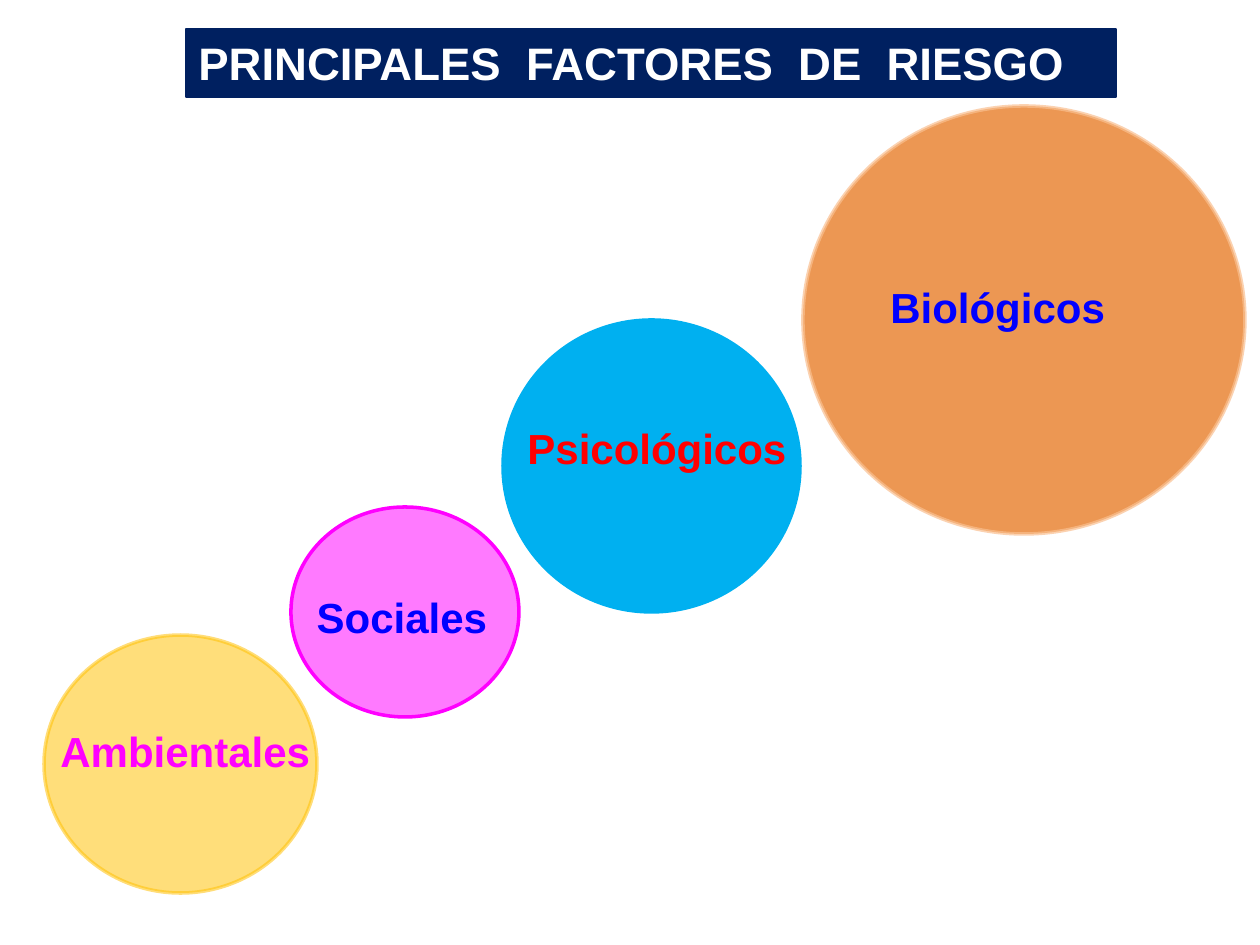
from dataclasses import dataclass

from lxml.etree import SubElement
from pptx import Presentation
from pptx.dml.color import RGBColor
from pptx.enum.shapes import MSO_SHAPE
from pptx.enum.text import MSO_ANCHOR, MSO_AUTO_SIZE, PP_ALIGN
from pptx.oxml.ns import qn
from pptx.shapes.autoshape import Shape
from pptx.slide import Slide
from pptx.util import Pt

PIXEL = 914400 / 126
LABEL_HEIGHT = 63
FONT = "Arial"
COLORS = {
    "orange": "E46C0A",
    "peach": "FAC090",
    "amber": "FFC000",
    "sky": "00B0F0",
    "magenta": "FF00FF",
    "blue": "0000FF",
    "red": "FF0000",
    "navy": "002060",
    "white": "FFFFFF",
}


@dataclass(frozen=True)
class Box:
    left: int
    top: int
    width: int
    height: int

    def emu(self) -> list[int]:
        return [round(value * PIXEL)
                for value in (self.left, self.top, self.width, self.height)]


@dataclass(frozen=True)
class Factor:
    name: str
    circle: Box
    label: Box
    fill: str
    line: str
    text: str
    fill_opacity: int = 100
    line_opacity: int = 100
    alignment: PP_ALIGN = PP_ALIGN.LEFT


# Risk factors, from back to front
FACTORS = [
    Factor("Biológicos", Box(803, 106, 442, 428), Box(878, 275, 277, LABEL_HEIGHT),
           "orange", "peach", "blue", 70, 70),
    Factor("Ambientales", Box(44, 635, 273, 258), Box(48, 719, 276, LABEL_HEIGHT),
           "amber", "amber", "magenta", 52, 52),
    Factor("Psicológicos", Box(503, 320, 297, 292), Box(515, 416, 297, LABEL_HEIGHT),
           "sky", "sky", "red"),
    Factor("Sociales", Box(291, 507, 228, 210), Box(302, 585, 200, LABEL_HEIGHT),
           "magenta", "magenta", "blue", 52, alignment=PP_ALIGN.CENTER),
]


def color(name: str) -> RGBColor:
    return RGBColor.from_string(COLORS[name])


def set_opacity(shape: Shape, fill_opacity: int, line_opacity: int) -> None:
    properties = shape.element.spPr
    for parent, percent in ((properties, fill_opacity),
                            (properties.find(qn("a:ln")), line_opacity)):
        if percent < 100:
            paint = parent.find(qn("a:solidFill")).find(qn("a:srgbClr"))
            SubElement(paint, qn("a:alpha")).set("val", str(percent * 1000))


def add_filled_shape(slide: Slide, kind: MSO_SHAPE, box: Box,
                     fill: str, line: str, line_width: float) -> Shape:
    shape = slide.shapes.add_shape(kind, *box.emu())
    shape.shadow.inherit = False
    shape.fill.solid()
    shape.fill.fore_color.rgb = color(fill)
    shape.line.color.rgb = color(line)
    shape.line.width = Pt(line_width)
    return shape


def write_text(shape: Shape, text: str, size: int, text_color: str,
               alignment: PP_ALIGN) -> None:
    frame = shape.text_frame
    frame.word_wrap = True
    frame.auto_size = MSO_AUTO_SIZE.SHAPE_TO_FIT_TEXT
    frame.vertical_anchor = MSO_ANCHOR.TOP
    paragraph = frame.paragraphs[0]
    paragraph.text = text
    paragraph.alignment = alignment
    paragraph.font.name = FONT
    paragraph.font.size = Pt(size)
    paragraph.font.bold = True
    paragraph.font.color.rgb = color(text_color)


def add_factor(slide: Slide, factor: Factor) -> None:
    circle = add_filled_shape(slide, MSO_SHAPE.OVAL, factor.circle,
                              factor.fill, factor.line, 2)
    set_opacity(circle, factor.fill_opacity, factor.line_opacity)
    label = slide.shapes.add_textbox(*factor.label.emu())
    write_text(label, factor.name, 24, factor.text, factor.alignment)


def add_title(slide: Slide) -> None:
    banner = add_filled_shape(slide, MSO_SHAPE.RECTANGLE, Box(186, 29, 930, 68),
                              "navy", "navy", 0.75)
    write_text(banner, "PRINCIPALES  FACTORES  DE  RIESGO", 26, "white",
               PP_ALIGN.JUSTIFY)


def main() -> None:
    presentation = Presentation()
    presentation.slide_width = round(1260 * PIXEL)
    presentation.slide_height = round(945 * PIXEL)
    slide = presentation.slides.add_slide(presentation.slide_layouts[6])

    # Circles with their labels
    for factor in FACTORS:
        add_factor(slide, factor)

    # Title banner
    add_title(slide)
    presentation.save("out.pptx")


if __name__ == "__main__":
    main()
